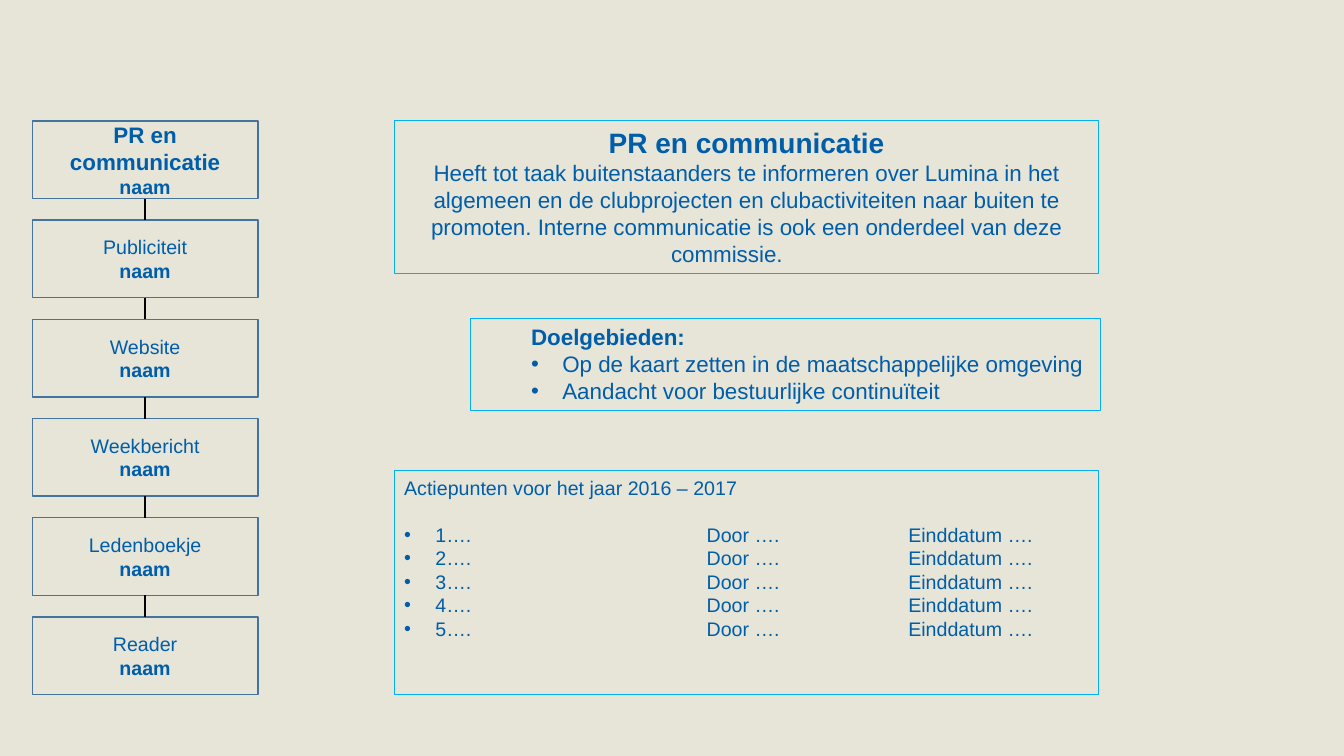
from dataclasses import dataclass

from lxml import etree
from pptx import Presentation
from pptx import util as u
from pptx.dml import color
from pptx.enum import shapes, text
from pptx.oxml import ns


@dataclass(frozen=True)
class Theme:
    font: str = "Arial"
    ground: str = "E6E5D8"
    ink: str = "005DAA"
    frame: str = "00B0F0"
    node: str = "43739E"
    link: str = "000000"
    title: int = 20
    body: int = 16
    small: int = 14
    thin: float = 0.75
    thick: float = 1


def rgb(code):
    return color.RGBColor.from_string(code)


def add_para(frame, words, theme, size, bold=False, align=text.PP_ALIGN.LEFT,
             indent=0, hang=0, tabs=(), after=0):
    para = frame.paragraphs[0]
    if para.runs:
        para = frame.add_paragraph()
    para.alignment = align
    para.space_after = u.Pt(after)
    props = para._p.get_or_add_pPr()
    props.set("marL", str(u.Inches(indent)))
    props.set("indent", str(u.Inches(-hang)))
    if hang:
        etree.SubElement(props, ns.qn("a:buFont"), typeface=theme.font)
        etree.SubElement(props, ns.qn("a:buChar"), char="•")
    if tabs:
        stops = etree.SubElement(props, ns.qn("a:tabLst"))
        for stop in tabs:
            etree.SubElement(stops, ns.qn("a:tab"), pos=str(u.Inches(stop)), algn="l")
    span = para.add_run()
    span.text = words
    span.font.name = theme.font
    span.font.size = u.Pt(size)
    span.font.bold = bold
    span.font.color.rgb = rgb(theme.ink)


class Board:
    def __init__(self, deck, theme):
        self.deck = deck
        self.theme = theme
        self.page = deck.slides.add_slide(deck.slide_layouts[6])
        self.page.background.fill.solid()
        self.page.background.fill.fore_color.rgb = rgb(theme.ground)

    def across(self, percent):
        return round(self.deck.slide_width * percent / 100)

    def down(self, percent):
        return round(self.deck.slide_height * percent / 100)

    def box(self, left, top, width, height, line, weight, anchor=text.MSO_ANCHOR.TOP):
        box = self.page.shapes.add_shape(
            shapes.MSO_SHAPE.RECTANGLE, self.across(left), self.down(top),
            self.across(width), self.down(height))
        box.shadow.inherit = False
        box.fill.background()
        box.line.color.rgb = rgb(line)
        box.line.width = u.Pt(weight)
        box.text_frame.word_wrap = True
        box.text_frame.vertical_anchor = anchor
        return box.text_frame

    def panel(self, left, top, width, height):
        return self.box(left, top, width, height, self.theme.frame, self.theme.thin)

    def node(self, left, top, width, height):
        return self.box(left, top, width, height, self.theme.node, self.theme.thick,
                        text.MSO_ANCHOR.MIDDLE)

    def link(self, x, top, bottom):
        link = self.page.shapes.add_connector(
            shapes.MSO_CONNECTOR.STRAIGHT, self.across(x), self.down(top),
            self.across(x), self.down(bottom))
        link.line.color.rgb = rgb(self.theme.link)
        link.line.width = u.Pt(self.theme.thick)
        etree.SubElement(link._element.spPr, ns.qn("a:effectLst"))

    def say(self, frame, words, size, **style):
        add_para(frame, words, self.theme, size, **style)


def draw_committee(board):
    theme = board.theme
    left, top, width, height, pitch = 2.4, 16, 16.8, 10.27, 13.12
    names = ["PR en communicatie", "Publiciteit", "Website",
             "Weekbericht", "Ledenboekje", "Reader"]
    for row, name in enumerate(names):
        y = top + row * pitch
        head = row == 0
        node = board.node(left, y, width, height)
        board.say(node, name, theme.body if head else theme.small,
                  bold=head, align=text.PP_ALIGN.CENTER)
        board.say(node, "naam", theme.small, bold=True, align=text.PP_ALIGN.CENTER)
        if not head:
            board.link(left + width / 2, y - pitch + height, y)


def draw_panels(board):
    theme = board.theme
    left, width = 29.33, 52.44

    task = board.panel(left, 16, width, 20.13)
    board.say(task, "PR en communicatie", theme.title, bold=True,
              align=text.PP_ALIGN.CENTER)
    board.say(task, "Heeft tot taak buitenstaanders te informeren over Lumina in het "
              "algemeen en de clubprojecten en clubactiviteiten naar buiten te "
              "promoten. Interne communicatie is ook een onderdeel van deze "
              "commissie.\t", theme.body, align=text.PP_ALIGN.CENTER)

    goals = board.panel(35.03, 42.13, 46.89, 12.13)
    board.say(goals, "Doelgebieden:", theme.body, bold=True, indent=0.5)
    for goal in ("Op de kaart zetten in de maatschappelijke omgeving",
                 "Aandacht voor bestuurlijke continuïteit"):
        board.say(goals, goal, theme.body, indent=0.81, hang=0.31)

    actions = board.panel(left, 62.27, width, 29.6)
    board.say(actions, "Actiepunten voor het jaar 2016 – 2017", theme.small, after=16.8)
    for number in range(1, 6):
        board.say(actions, f"{number}….\tDoor ….\tEinddatum ….", theme.small,
                  indent=0.31, hang=0.31, tabs=(3, 5))


def main():
    deck = Presentation()
    deck.slide_width = u.Inches(13.33)
    deck.slide_height = u.Inches(7.5)
    board = Board(deck, Theme())
    draw_panels(board)
    draw_committee(board)
    deck.save("out.pptx")


if __name__ == "__main__":
    main()
